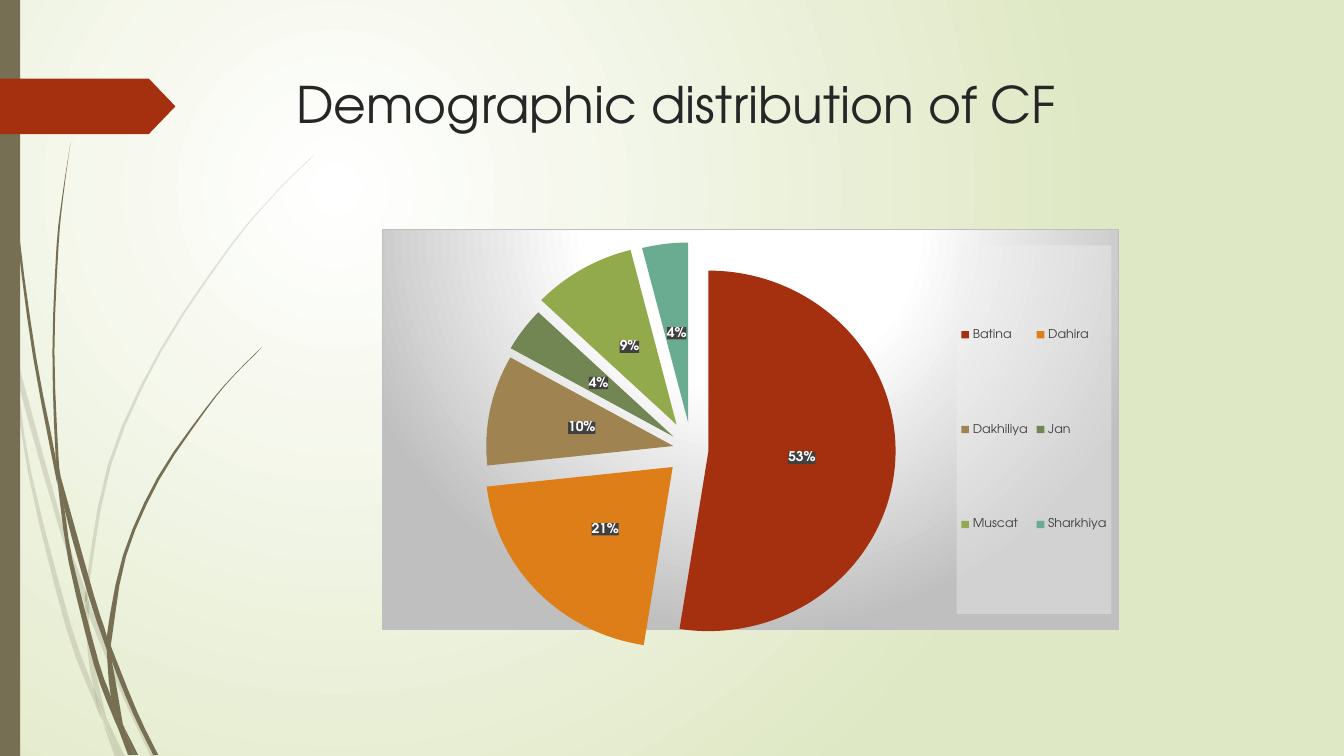
from pptx import Presentation
from pptx.chart.data import CategoryChartData
from pptx.dml.color import RGBColor
from pptx.enum.chart import XL_CHART_TYPE as ChartType, XL_LABEL_POSITION as LabelAt, XL_LEGEND_POSITION as LegendAt
from pptx.enum.shapes import MSO_SHAPE as Preset
from pptx.enum.text import MSO_ANCHOR as Anchor
from pptx.oxml import parse_xml
from pptx.oxml.ns import nsdecls, qn
from pptx.util import Inches, Pt

FACE = "TeX Gyre Adventor"
OLIVE, RUST, GREY = "766F54", "A53010", "BFBFBF"
UNITS = 1000  # outline units per inch
hex_color = RGBColor.from_string


def node(tag, inner="", attrs=""):
    return parse_xml(f"<{tag} {nsdecls('a', 'c')} {attrs}>{inner}</{tag}>")


def smooth(points, steps=3):
    """Catmull-Rom curve through the points."""
    padded = [points[0], *points, points[-1]]
    curve = [points[0]]
    for p, q, r, s in zip(padded, padded[1:], padded[2:], padded[3:]):
        for t in (step / steps for step in range(1, steps + 1)):
            curve.append(tuple(
                (2 * b + (c - a) * t + (2 * a - 5 * b + 4 * c - d) * t ** 2
                 + (3 * b - a - 3 * c + d) * t ** 3) / 2
                for a, b, c, d in zip(p, q, r, s)))
    return curve


deck = Presentation()
deck.slide_width, deck.slide_height = Inches(13.33), Inches(7.5)
slide = deck.slides.add_slide(deck.slide_layouts[6])

# Background: radial glow centred in the upper left quarter
radial = ('<a:gsLst>{}</a:gsLst><a:path path="circle">'
          '<a:fillToRect l="{}" t="{}" r="{}" b="{}"/></a:path>')
stop = '<a:gs pos="{}"><a:srgbClr val="{}"/></a:gs>'
slide.background.fill.solid()
backdrop = slide.element.find(".//" + qn("p:bgPr"))
glow = stop.format(0, "FFFFFF") + stop.format(100000, "DFE8C4")
backdrop.replace(backdrop[0], node("a:gradFill", radial.format(glow, 50000, 50000, 100000, 100000)))

# Grass: every piece of a blade has a left and a right edge, both from top to bottom
pale_grass = [
    ([(0, 2.82), (0, 2.99), (.1, 3.44), (.11, 3.5)], [(0, 2.82), (.09, 3.22), (.11, 3.5)]),
    ([(.14, 3.45), (.17, 3.76), (.58, 5.22), (.84, 5.99)], [(.14, 3.45), (.62, 5.2), (.85, 5.86), (.84, 5.99)]),
    ([(.88, 5.96), (.88, 6.1), (1.23, 6.94), (1.5, 7.51)], [(.88, 5.96), (.92, 6.07), (1.27, 6.92), (1.55, 7.51)]),
    ([(1.05, 7.11), (1.19, 7.51)], [(1.05, 7.11), (1.24, 7.51)]),
    ([(.11, 3.5), (.28, 4.7), (.65, 6.21), (.92, 6.93), (1.01, 7.14)],
     [(.11, 3.5), (.17, 3.76), (.31, 4.69), (.7, 6.19), (.93, 6.83), (1.01, 7.14)]),
    ([(.84, 5.99), (.87, 6.46), (.93, 6.83), (1.05, 7.11)], [(.84, 5.99), (.88, 6.1), (.91, 6.46), (1.05, 7.11)]),
    ([(3.12, 1.53), (2.89, 1.75), (2.68, 1.97), (2.28, 2.44), (1.58, 3.48), (1.07, 4.61), (.85, 5.84), (.88, 5.96)],
     [(3.12, 1.54), (2.9, 1.75), (2.68, 1.98), (2.29, 2.45), (1.6, 3.49), (1.1, 4.62), (.88, 5.84), (.88, 5.96)]),
    ([(1.01, 7.14), (1.14, 7.51)], [(1.01, 7.14), (1.19, 7.51)]),
    ([(.85, 5.86), (.84, 5.99), (.88, 6.1)], [(.85, 5.86), (.88, 5.96), (.88, 6.1)]),
    ([(.93, 6.83), (.99, 7.07), (1.19, 7.51)], [(.93, 6.83), (1.05, 7.11), (1.19, 7.51)]),
]
dark_grass = [
    ([(.03, 0), (.04, .48), (.07, 1.1), (.17, 2.33), (.33, 3.55), (.57, 4.81)],
     [(.04, 0), (.05, .48), (.08, 1.09), (.19, 2.32), (.36, 3.55), (.55, 4.53), (.57, 4.81)]),
    ([(.6, 4.72), (.64, 5.05), (.88, 5.92), (1.06, 6.45)], [(.6, 4.72), (.93, 5.9), (1.06, 6.31), (1.06, 6.45)]),
    ([(1.1, 6.41), (1.11, 6.56), (1.32, 7.08), (1.52, 7.49)], [(1.1, 6.41), (1.36, 7.06), (1.57, 7.49)]),
    ([(.57, 4.77), (.68, 5.57), (.93, 6.59), (1.11, 7.08), (1.17, 7.22)],
     [(.57, 4.77), (.64, 5.05), (.72, 5.56), (.98, 6.57), (1.1, 6.91), (1.17, 7.22)]),
    ([(.7, 1.41), (.62, 1.93), (.56, 2.45), (.52, 3.49), (.55, 4.49), (.6, 4.72)],
     [(.7, 1.41), (.63, 1.93), (.58, 2.45), (.54, 3.49), (.58, 4.53), (.6, 4.72)]),
    ([(1.22, 7.19), (1.33, 7.49)], [(1.22, 7.19), (1.37, 7.49)]),
    ([(.55, 4.49), (.57, 4.77), (.64, 5.05)], [(.55, 4.49), (.6, 4.72), (.64, 5.05)]),
    ([(2.6, 3.44), (2.31, 3.73), (2.04, 4.05), (1.56, 4.74), (1.22, 5.51), (1.06, 6.31), (1.1, 6.41)],
     [(2.61, 3.44), (2.31, 3.74), (2.05, 4.06), (1.58, 4.76), (1.25, 5.52), (1.11, 6.33), (1.1, 6.41)]),
    ([(1.17, 7.22), (1.27, 7.49)], [(1.17, 7.22), (1.31, 7.49)]),
    ([(1.06, 6.45), (1.1, 6.91), (1.22, 7.19)], [(1.06, 6.45), (1.11, 6.56), (1.22, 7.19)]),
    ([(1.06, 6.31), (1.06, 6.45), (1.11, 6.56)], [(1.06, 6.31), (1.1, 6.41), (1.11, 6.56)]),
    ([(1.1, 6.91), (1.17, 7.22), (1.3, 7.49)], [(1.1, 6.91), (1.22, 7.19), (1.33, 7.49)]),
]
for opacity, grass in [(20, pale_grass), (100, dark_grass)]:
    for left_edge, right_edge in grass:
        outline = [(x * UNITS, y * UNITS) for x, y in smooth(left_edge) + smooth(right_edge)[:0:-1]]
        pen = slide.shapes.build_freeform(*outline[0], scale=Inches(1) / UNITS)
        pen.add_line_segments(outline[1:], close=True)
        blade = pen.convert_to_shape()
        blade.shadow.inherit = False
        blade.line.fill.background()
        blade.fill.solid()
        blade.fill.fore_color.rgb = hex_color(OLIVE)
        if opacity < 100:
            tint = blade.element.spPr.find(".//" + qn("a:srgbClr"))
            tint.append(node("a:alpha", attrs=f'val="{opacity * 1000}"'))

# Side bar and page tag
for preset, top, width, height, color in [
    (Preset.RECTANGLE, 0, .2, 7.5, OLIVE),
    (Preset.PENTAGON, .78, 1.74, .55, RUST),
]:
    band = slide.shapes.add_shape(preset, 0, Inches(top), Inches(width), Inches(height))
    band.shadow.inherit = False
    band.line.fill.background()
    band.fill.solid()
    band.fill.fore_color.rgb = hex_color(color)
    if preset == Preset.PENTAGON:
        band.adjustments[0] = .48

# Title
heading = slide.shapes.add_textbox(Inches(2.84), Inches(.68), Inches(9.75), Inches(1.4)).text_frame
heading.word_wrap = True
heading.vertical_anchor = Anchor.TOP
wording = heading.paragraphs[0].add_run()
wording.text = "Demographic distribution of CF"
wording.font.size, wording.font.name = Pt(36), FACE
wording.font.color.rgb = hex_color("262626")

# Pie: region, share in percent, colour, distance from the centre in percent
regions = [
    ("Batina", 53, RUST, 9),
    ("Dahira", 21, "DE7E18", 14),
    ("Dakhiliya", 10, "9F8351", 10),
    ("Jan", 4, "728653", 12),
    ("Muscat", 9, "92AA4C", 16),
    ("Sharkhiya", 4, "6AAC91", 15),
]
shares = CategoryChartData()
shares.categories = [region[0] for region in regions]
shares.add_series("Series 1", [region[1] for region in regions])
pie = slide.shapes.add_chart(ChartType.PIE, Inches(3.79), Inches(2.27), Inches(7.31), Inches(4.13), shares).chart
pie.has_title = False
pie.font.size, pie.font.name = Pt(10), FACE
pie.plots[0].vary_by_categories = True
series = pie.plots[0].series[0]
for index, (_, _, color, distance) in enumerate(regions):
    slice_look = series.points[index].format
    slice_look.fill.solid()
    slice_look.fill.fore_color.rgb = hex_color(color)
    slice_look.line.fill.background()
    slice_xml = pie.element.findall(".//" + qn("c:dPt"))[index]
    slice_xml.find(qn("c:spPr")).addprevious(node("c:explosion", attrs=f'val="{distance}"'))

# Slice labels
labels = series.data_labels
labels.show_value = True
labels.number_format, labels.number_format_is_linked = '0"%"', False
labels.position = LabelAt.CENTER
labels.font.size, labels.font.bold, labels.font.name = Pt(10), True, FACE
labels.font.color.rgb = hex_color("FFFFFF")

# Legend
pie.has_legend = True
legend = pie.legend
legend.position, legend.include_in_layout = LegendAt.RIGHT, False
legend.font.size, legend.font.name = Pt(9), FACE
legend.font.color.rgb = hex_color("404040")

# Panels behind the chart, the legend and the labels
veil = '<a:solidFill><a:srgbClr val="{}"><a:alpha val="{}"/></a:srgbClr></a:solidFill><a:ln><a:noFill/></a:ln>'
panel_stops = stop.format(0, "FFFFFF") + stop.format(39000, "FFFFFF") + stop.format(100000, GREY)
panel = (f'<a:gradFill>{radial.format(panel_stops, 50000, -80000, 50000, 180000)}</a:gradFill>'
         f'<a:ln w="9525"><a:solidFill><a:srgbClr val="{GREY}"/></a:solidFill></a:ln>')
for anchor, look in [
    ("c:chart", panel),
    (".//c:legend/c:overlay", veil.format("F2F2F2", 39000)),
    (".//c:ser/c:dLbls/c:numFmt", veil.format("404040", 75000)),
]:
    pie.element.find(anchor, pie.element.nsmap).addnext(node("c:spPr", look))

# Places of the plot and the legend, as shares of the chart
for old_layout in pie.element.findall(".//" + qn("c:layout")):
    old_layout.getparent().remove(old_layout)
for owner, position, target, frame in [
    ("c:plotArea", 0, '<c:layoutTarget val="inner"/>', (.03, .1, .78, .9)),
    ("c:legend", 1, "", (.78, .04, .21, .92)),
]:
    parts = target + '<c:xMode val="edge"/><c:yMode val="edge"/>'
    parts += "".join(f'<c:{side} val="{share}"/>' for side, share in zip("xywh", frame))
    pie.element.find(".//" + qn(owner)).insert(position, node("c:layout", f"<c:manualLayout>{parts}</c:manualLayout>"))

deck.save("out.pptx")
